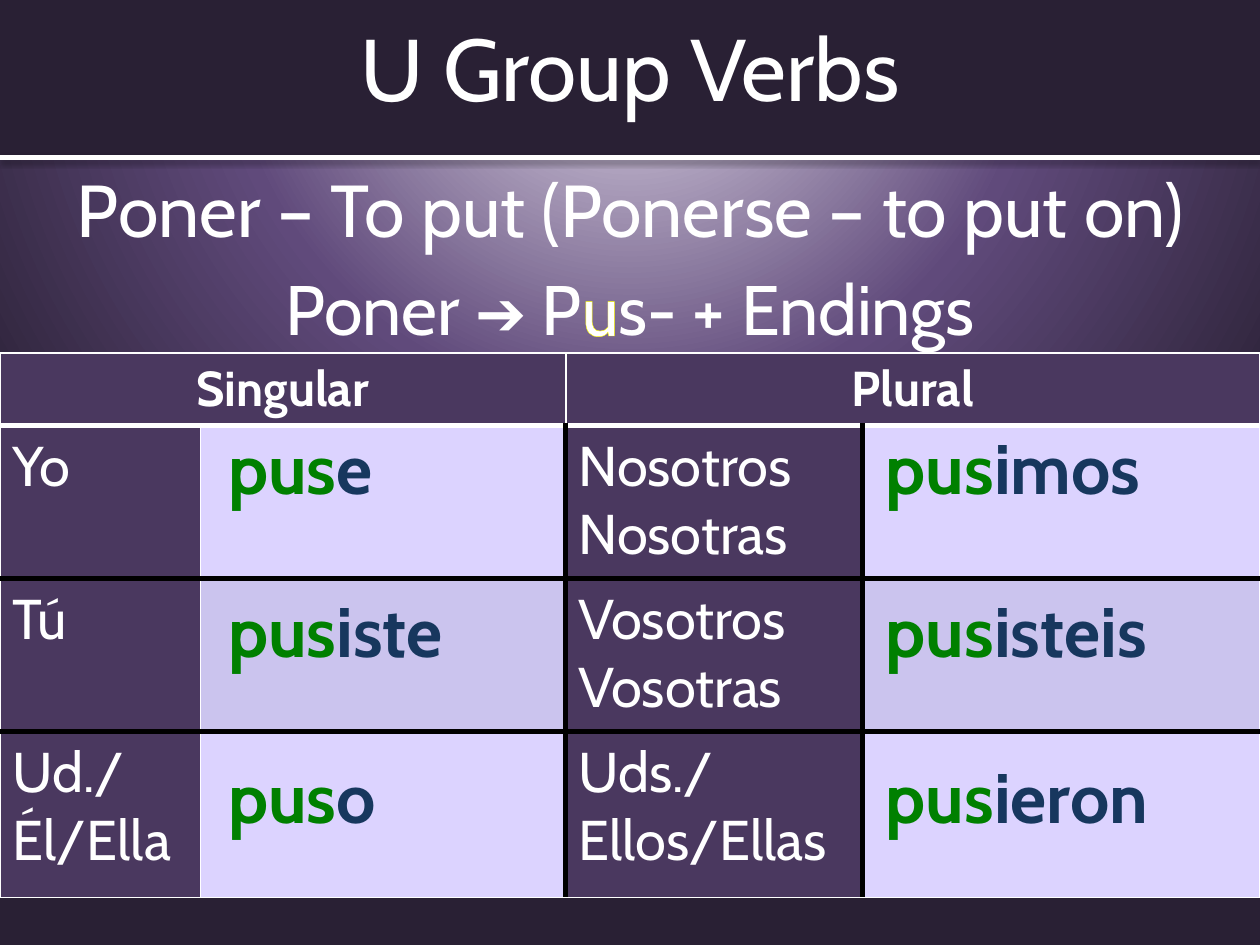
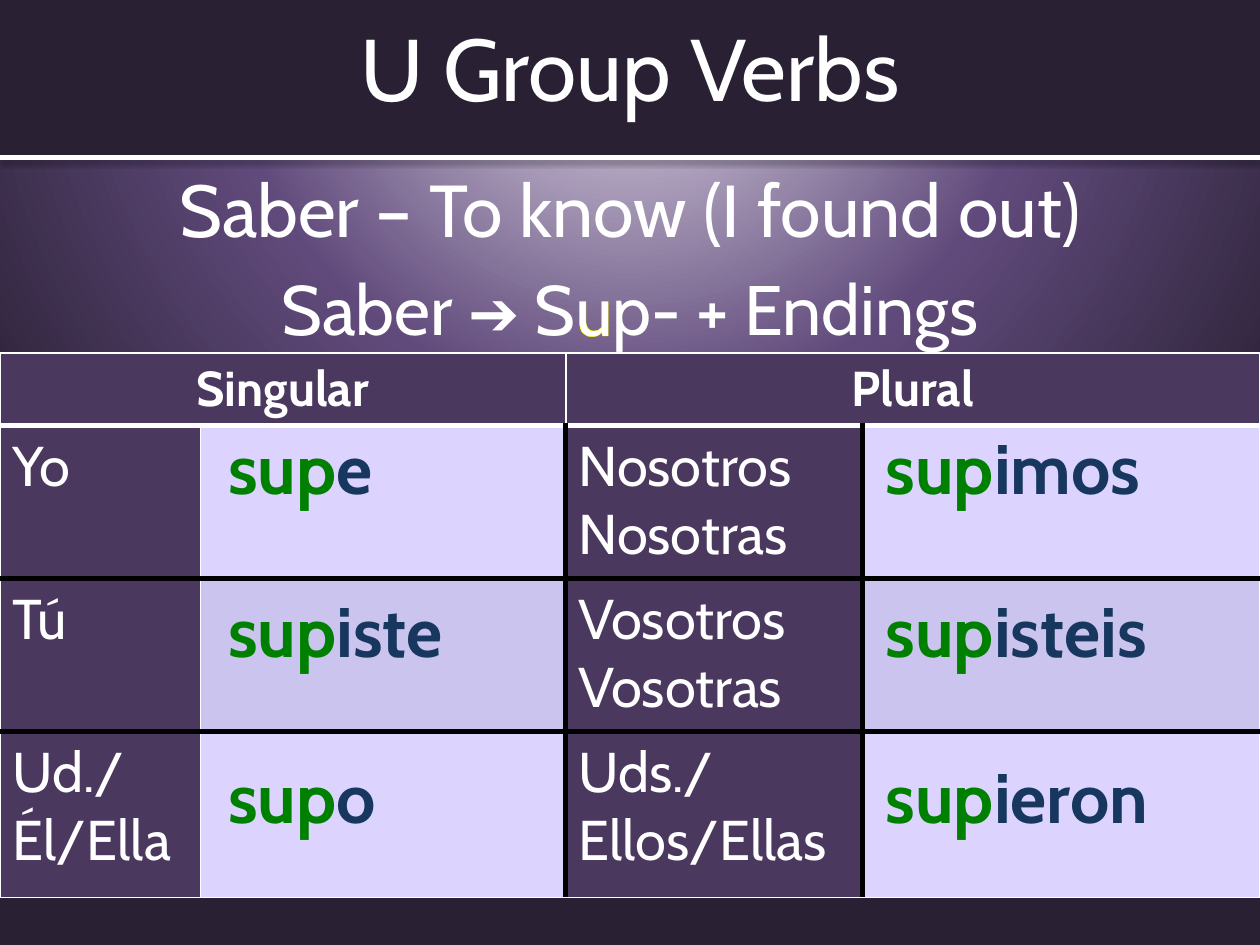
from pptx import Presentation
from pptx.dml.color import RGBColor
from pptx.enum.shapes import MSO_CONNECTOR, MSO_SHAPE
from pptx.enum.text import MSO_ANCHOR, MSO_AUTO_SIZE, PP_ALIGN
from pptx.oxml import parse_xml
from pptx.oxml.ns import nsdecls, qn
from pptx.util import Pt

COLORS = {
    "white": "FFFFFF", "black": "000000", "night": "292034",
    "violet": "604A7B", "mist": "E6E0EC", "plum": "4A385F",
    "light": "DCD3FF", "dusk": "CBC4EE", "green": "008000",
    "navy": "17375E", "yellow": "FFFF00",
}
FONT = "Cabin"
WIDTH, HEIGHT = 720, 540
BAND = 90
COLS = [114.5, 208.8, 169.5, 227.2]
ROWS = [41.7, 87.4, 87.4, 94.9]
GRID = (0, 201.6, WIDTH, sum(ROWS))

# Rules of the grid, from left to right and from top to bottom
THIN, THICK, DARK = ("white", 1), ("white", 3), ("black", 3)
UPRIGHT = [THIN, THIN, DARK, DARK, THIN]
LEVEL = [THIN, THICK, DARK, DARK, THIN]

PEOPLE = [
    ("Yo", "Nosotros\nNosotras"),
    ("Tú", "Vosotros\nVosotras"),
    ("Ud./Él/Ella", "Uds./Ellos/Ellas"),
]
# Left edge and the (ending, width) pairs of each column of forms
FORMS = [
    (123.1, [("e", 177), ("iste", 168.5), ("o", 177)]),
    (499, [("imos", 203), ("isteis", 181.5), ("ieron", 173)]),
]
TOPS = [240.5, 333.4, 428.4]

VERBS = [
    ("Poner", "To put (Ponerse – to put on)", "pus"),
    ("Saber", "To know (I found out)", "sup"),
]


def rgb(name):
    return RGBColor.from_string(COLORS[name])


def place(shape, box):
    shape.left, shape.top, shape.width, shape.height = map(Pt, box)


def style(run, size, color="white", bold=False, face=FONT):
    font = run.font
    font.size, font.bold, font.name = Pt(size), bold, face
    font.color.rgb = rgb(color)


def write(para, text, *look, **more):
    run = para.add_run()
    run.text = text
    style(run, *look, **more)
    return run


def edge(cell, side, rule):
    """Draw one border of a cell; a rule of None hides it."""
    if rule:
        name, size = rule
        fill = f'<a:solidFill><a:srgbClr val="{COLORS[name]}"/></a:solidFill>'
    else:
        size, fill = 0, "<a:noFill/>"
    cell._tc.get_or_add_tcPr().append(parse_xml(
        f'<a:ln{side} {nsdecls("a")} w="{Pt(size)}">{fill}</a:ln{side}>'))


def frame(cell, rules, color=None):
    """Set the left, right, top and bottom rules, then the fill."""
    for side, rule in zip("LRTB", rules):
        edge(cell, side, rule)
    if color:
        cell.fill.solid()
        cell.fill.fore_color.rgb = rgb(color)
    else:
        cell.fill.background()


def table(slide, box, cols, rows):
    grid = slide.shapes.add_table(len(rows), len(cols), *map(Pt, box)).table
    grid.first_row = grid.horz_banding = False
    for col, width in zip(grid.columns, cols):
        col.width = Pt(width)
    for row, height in zip(grid.rows, rows):
        row.height = Pt(height)
    return grid


def backdrop(master):
    master.background.fill.solid()
    props = master.element.find(".//" + qn("p:bgPr"))
    stops = "".join(
        f'<a:gs pos="{pos}"><a:srgbClr val="{COLORS[name]}"/></a:gs>'
        for pos, name in [(0, "mist"), (52000, "violet"), (100000, "night")])
    props.replace(props[0], parse_xml(
        f'<a:gradFill {nsdecls("a")} rotWithShape="1"><a:gsLst>{stops}</a:gsLst>'
        '<a:path path="circle"><a:fillToRect l="50000" t="-80000" r="50000" '
        'b="180000"/></a:path></a:gradFill>'))


def header(slide, box, text):
    left, top, width, height = box
    band = slide.shapes.add_shape(MSO_SHAPE.RECTANGLE, *map(Pt, box))
    band.shadow.inherit = False
    band.fill.solid()
    band.fill.fore_color.rgb = rgb("night")
    band.line.fill.background()
    slide.shapes._spTree.insert(2, band._element)

    base = top + height
    line = slide.shapes.add_connector(
        MSO_CONNECTOR.STRAIGHT, *map(Pt, (left, base, left + width, base)))
    line.line.color.rgb = rgb("white")
    line.line.width = Pt(3)
    line._element.spPr.append(parse_xml(
        f'<a:effectLst {nsdecls("a")}><a:outerShdw blurRad="{Pt(3.1)}" '
        f'dist="{Pt(1.6)}" dir="5400000" rotWithShape="0">'
        f'<a:srgbClr val="{COLORS["black"]}"><a:alpha val="38000"/></a:srgbClr>'
        '</a:outerShdw></a:effectLst>'))

    title = slide.shapes.title
    place(title, (left, top, width, height - 13.7))
    words = title.text_frame
    words.text = text
    words.auto_size = MSO_AUTO_SIZE.NONE
    words.vertical_anchor = MSO_ANCHOR.MIDDLE
    words.paragraphs[0].alignment = PP_ALIGN.CENTER
    style(words.paragraphs[0].runs[0], 50)


def intro(slide, box, verb, sense, stem):
    """State the meaning of the verb and its irregular stem."""
    body = slide.placeholders[1]
    place(body, box)
    words = body.text_frame
    words.auto_size = MSO_AUTO_SIZE.NONE
    words.vertical_anchor = MSO_ANCHOR.TOP
    first, second = words.paragraphs[0], words.add_paragraph()
    first.alignment = second.alignment = PP_ALIGN.CENTER
    write(first, f"{verb} – {sense}", 42)

    start, vowel, end = stem
    write(second, f"{verb} ", 40)
    write(second, "➔", 35, face="Arial")
    write(second, " ", 30, face="Arial")
    write(second, start.upper(), 40)
    mark = write(second, vowel, 40)
    mark.font._element.insert(0, parse_xml(
        f'<a:ln {nsdecls("a")} w="{Pt(0.75)}"><a:solidFill>'
        f'<a:srgbClr val="{COLORS["yellow"]}"/></a:solidFill></a:ln>'))
    write(second, f"{end}- + Endings", 40)


def chart(slide, box):
    """Lay out the grid of persons, with room for the verb forms."""
    grid = table(slide, box, COLS, ROWS)
    for col, text in [(0, "Singular"), (2, "Plural")]:
        cell = grid.cell(0, col)
        cell.merge(grid.cell(0, col + 1))
        for part in (cell, grid.cell(0, col + 1)):
            frame(part, (THIN, THIN, LEVEL[0], LEVEL[1]), "plum")
        para = cell.text_frame.paragraphs[0]
        para.alignment = PP_ALIGN.CENTER
        write(para, text, 28, bold=True)

    for row, names in enumerate(PEOPLE, 1):
        for col in range(4):
            cell = grid.cell(row, col)
            blank = "light" if row % 2 else "dusk"
            frame(cell, UPRIGHT[col:col + 2] + LEVEL[row:row + 2],
                  blank if col % 2 else "plum")
            if col % 2 == 0:
                cell.text_frame.text = names[col // 2]
                for para in cell.text_frame.paragraphs:
                    style(para.runs[0], 32)


def form(slide, box, stem, ending):
    cell = table(slide, box, [box[2]], [box[3]]).cell(0, 0)
    frame(cell, [None] * 4)
    para = cell.text_frame.paragraphs[0]
    write(para, stem, 40, "green", True)
    write(para, ending, 40, "navy", True)


def lesson(deck, verb, sense, stem):
    slide = deck.slides.add_slide(deck.slide_layouts[0])
    header(slide, (0, 0, WIDTH, BAND), "U Group Verbs")
    intro(slide, (0, BAND, WIDTH, 374.4), verb, sense, stem)
    chart(slide, GRID)
    for left, endings in FORMS:
        for top, (ending, width) in zip(TOPS, endings):
            form(slide, (left, top, width, 55.4), stem, ending)


def main():
    deck = Presentation()
    deck.slide_width, deck.slide_height = Pt(WIDTH), Pt(HEIGHT)
    backdrop(deck.slide_master)
    for verb in VERBS:
        lesson(deck, *verb)
    deck.save("out.pptx")


if __name__ == "__main__":
    main()
